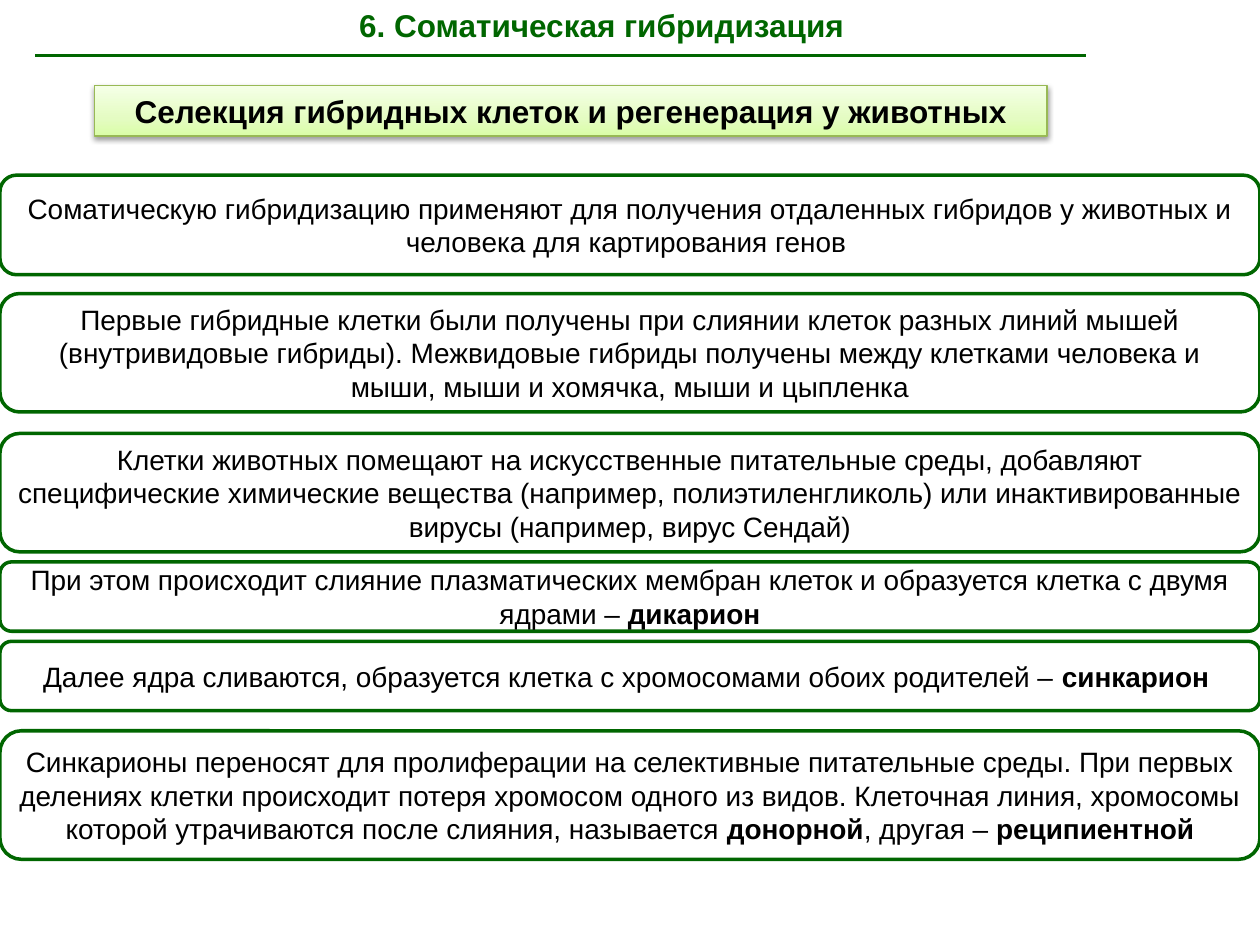
"""Build the slide on somatic hybridization in animals."""
import copy
import pptx
import pptx.util
import pptx.dml.color
import pptx.enum.shapes
import pptx.enum.text
import pptx.oxml
import pptx.oxml.ns

HEAD = "6. Соматическая гибридизация"
TOPIC = "Селекция гибридных клеток и регенерация у животных"
STEPS = [
    (1.39, 0.79, ["Соматическую гибридизацию применяют для получения отдаленных гибридов "
                  "у животных и человека для картирования генов "]),
    (2.33, 0.94, ["Первые гибридные клетки были получены при слиянии клеток разных линий мышей "
                  "(внутривидовые гибриды). Межвидовые гибриды получены между клетками человека "
                  "и мыши, мыши и хомячка, мыши и цыпленка"]),
    (3.44, 0.94, ["Клетки животных помещают на искусственные питательные среды, добавляют "
                  "специфические химические вещества (например, полиэтиленгликоль) "
                  "или инактивированные вирусы (например, вирус Сендай)"]),
    (4.46, 0.55, ["При этом происходит слияние плазматических мембран клеток и образуется "
                  "клетка с двумя ядрами – ", "дикарион"]),
    (5.09, 0.55, ["Далее ядра сливаются, образуется клетка с хромосомами обоих родителей – ",
                  "синкарион "]),
    (5.8, 1.02, ["Синкарионы переносят для пролиферации на селективные питательные среды. "
                 "При первых делениях клетки происходит потеря хромосом одного из видов. "
                 "Клеточная линия, хромосомы которой утрачиваются после слияния, называется ",
                 "донорной", ", другая – ", "реципиентной"]),
]
COLORS = {"green": "006600", "white": "FFFFFF", "black": "000000", "edge": "98B955"}
STOPS = [(0, "DAFDA7"), (0.35, "E4FCC2"), (1, "F5FFE7")]
WIDE, HIGH = 10, 7.5
FONT = "Arial"

Inch = pptx.util.Inches
Kind = pptx.enum.shapes.MSO_SHAPE
Fit = pptx.enum.text.MSO_AUTO_SIZE
Mid = pptx.enum.text.MSO_ANCHOR.MIDDLE
Top = pptx.enum.text.MSO_ANCHOR.TOP


def rgb(name):
    return pptx.dml.color.RGBColor.from_string(COLORS.get(name, name))


def write(shape, parts, size=16, color="black", bold=False, anchor=Mid, wrap=True, fit=Fit.NONE):
    """Fill a shape with runs; every second run is bold."""
    frame = shape.text_frame
    frame.word_wrap, frame.auto_size, frame.vertical_anchor = wrap, fit, anchor
    para = frame.paragraphs[0]
    para.alignment = pptx.enum.text.PP_ALIGN.CENTER
    for num, part in enumerate(parts):
        run = para.add_run()
        run.text = part
        font = run.font
        font.name, font.size = FONT, pptx.util.Pt(size)
        font.bold = bold or num % 2 == 1
        font.color.rgb = rgb(color)


def stroke(item, color, width):
    item.line.color.rgb = rgb(color)
    item.line.width = pptx.util.Pt(width)


def add_box(slide, kind, *place):
    box = slide.shapes.add_shape(kind, *map(Inch, place))
    box.shadow.inherit = False
    return box


def shade(box):
    """Give a box a three-stop gradient and a soft shadow."""
    box.fill.gradient()
    box.fill.gradient_angle = 90
    group = box._element.spPr.find(".//" + pptx.oxml.ns.qn("a:gsLst"))
    group.append(copy.deepcopy(group[0]))
    for stop, (spot, color) in zip(box.fill.gradient_stops, STOPS):
        stop.position, stop.color.rgb = spot, rgb(color)
    effect = box._element.spPr.find(pptx.oxml.ns.qn("a:effectLst"))
    effect.append(pptx.oxml.parse_xml(
        f'<a:outerShdw {pptx.oxml.ns.nsdecls("a")} blurRad="40000" dist="20000" '
        f'dir="5400000" rotWithShape="0"><a:srgbClr val="{COLORS["black"]}">'
        '<a:alpha val="38000"/></a:srgbClr></a:outerShdw>'))


def main():
    deck = pptx.Presentation()
    deck.slide_width, deck.slide_height = Inch(WIDE), Inch(HIGH)
    slide = deck.slides.add_slide(deck.slide_layouts[5])

    title = slide.shapes.title
    title.left, title.top, title.width, title.height = map(Inch, (2.65, 0, 4.25, 0.4))
    write(title, [HEAD], size=18, color="green", bold=True, anchor=Top, wrap=False, fit=Fit.SHAPE_TO_FIT_TEXT)

    rule = slide.shapes.add_connector(
        pptx.enum.shapes.MSO_CONNECTOR.STRAIGHT, *map(Inch, (0.28, 0.44, 8.62, 0.44)))
    stroke(rule, "green", 2)
    rule._element.spPr.append(pptx.oxml.parse_xml(f'<a:effectLst {pptx.oxml.ns.nsdecls("a")}/>'))

    for top, high, parts in STEPS:
        box = add_box(slide, Kind.ROUNDED_RECTANGLE, 0, top, WIDE, high)
        box.fill.solid()
        box.fill.fore_color.rgb = rgb("white")
        stroke(box, "green", 2)
        write(box, parts)

    label = add_box(slide, Kind.RECTANGLE, 0.75, 0.68, 7.56, 0.4)
    shade(label)
    stroke(label, "edge", 0.75)
    write(label, [TOPIC], size=18, bold=True, anchor=Top, fit=Fit.SHAPE_TO_FIT_TEXT)

    deck.save("out.pptx")


if __name__ == "__main__":
    main()
